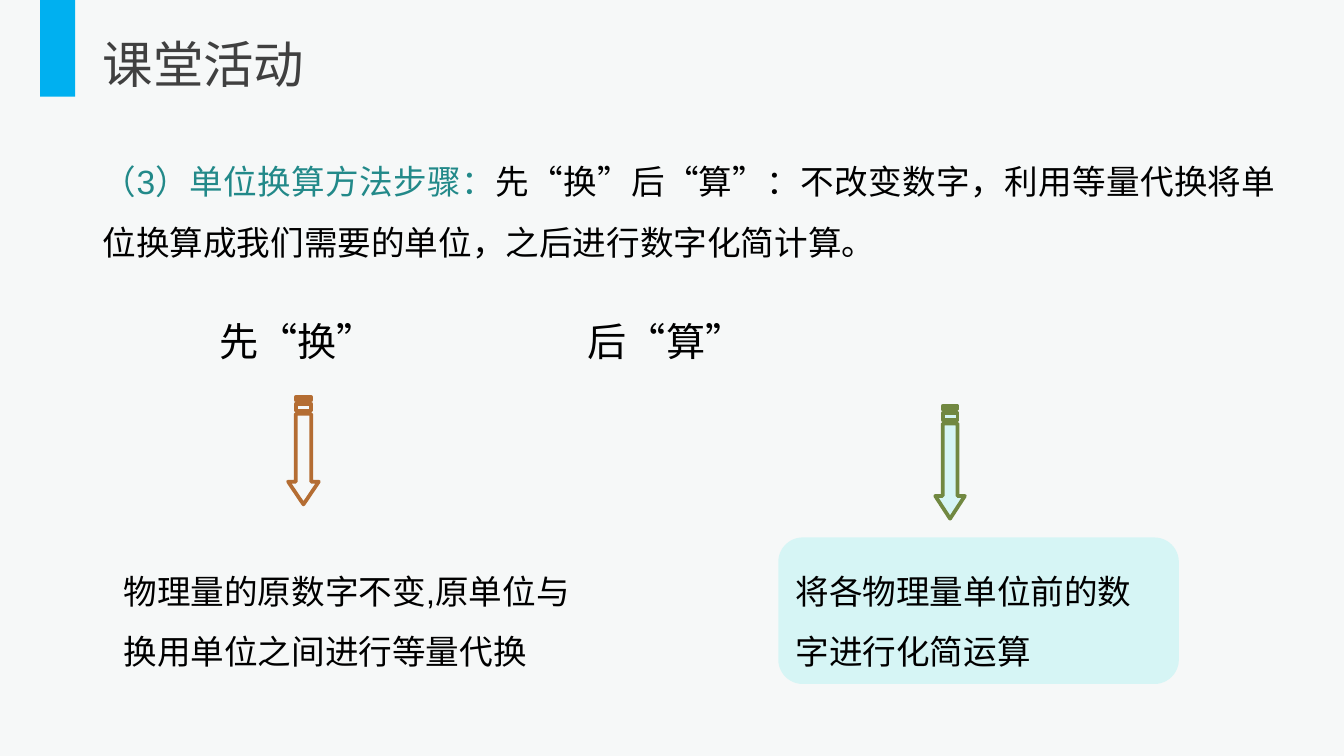
from dataclasses import dataclass

from lxml import etree
from pptx import Presentation
from pptx import util as u
from pptx.dml.color import RGBColor
from pptx.enum import shapes, text
from pptx.oxml import ns

Cm = u.Cm


@dataclass(frozen=True)
class Theme:
    font: str = "Arial"
    page: str = "F6F8F8"
    bar: str = "00B0F0"
    title: str = "404040"
    key: str = "228989"
    ink: str = "000000"
    mint: str = "D6F5F5"
    rust: str = "B46D33"
    moss: str = "718841"
    big: int = 27
    mid: int = 21
    body: int = 18


T = Theme()


def paint(item, color):
    item.fill.solid()
    item.fill.fore_color.rgb = RGBColor.from_string(color)


def write(shape, runs, align=text.PP_ALIGN.LEFT, space=None, wrap=True,
          anchor=text.MSO_ANCHOR.TOP):
    """Fill a shape with one paragraph of (words, size, color) runs."""
    frame = shape.text_frame
    frame.margin_left = frame.margin_right = Cm(0.19)
    frame.margin_top = frame.margin_bottom = Cm(0.1)
    frame.word_wrap = wrap
    frame.auto_size = text.MSO_AUTO_SIZE.SHAPE_TO_FIT_TEXT
    frame.vertical_anchor = anchor
    para = frame.paragraphs[0]
    para.alignment = align
    if space:
        para.line_spacing = space
    for words, size, color in runs:
        run = para.add_run()
        run.text = words
        run.font.name = T.font
        run.font.size = u.Pt(size)
        run.font.color.rgb = RGBColor.from_string(color)
    return para


def add_title(slide, words):
    title = slide.shapes.title
    title.left, title.top, title.width, title.height = map(
        Cm, (1.75, 0.53, 4.27, 1.35))
    write(title, [(words, T.big, T.title)], text.PP_ALIGN.JUSTIFY, wrap=False)


def add_box(slide, kind, place, color):
    box = slide.shapes.add_shape(kind, *map(Cm, place))
    box.shadow.inherit = False
    paint(box, color)
    box.line.fill.background()
    return box


def add_note(slide, kind, place, color, words):
    box = add_box(slide, kind, place, color)
    write(box, [(words, T.body, T.ink)], space=1.5,
          anchor=text.MSO_ANCHOR.MIDDLE)


def add_text(slide, place):
    return slide.shapes.add_textbox(*map(Cm, place))


def add_tab(para, pos):
    tabs = etree.SubElement(para._p.get_or_add_pPr(), ns.qn("a:tabLst"))
    etree.SubElement(tabs, ns.qn("a:tab"), pos=str(int(Cm(pos))), algn="l")


def add_arrow(slide, place, fill, line):
    """Striped arrow, drawn pointing right and turned to point down."""
    x, y, w, h = place
    neck = w - 0.43
    top, low = h / 4, h * 3 / 4
    shaft = w * 5 / 32
    outlines = [
        [(shaft, top), (neck, top), (neck, 0), (w, h / 2),
         (neck, h), (neck, low), (shaft, low)],
    ]
    for start, end in ((w / 16, w / 8), (0, w / 32)):
        outlines.append([(start, top), (end, top), (end, low), (start, low)])

    pen = None
    for outline in outlines:
        first, *rest = [(Cm(x + dx), Cm(y + dy)) for dx, dy in outline]
        if pen is None:
            pen = slide.shapes.build_freeform(*first)
        else:
            pen.move_to(*first)
        pen.add_line_segments(rest, close=True)
    arrow = pen.convert_to_shape()
    arrow.rotation = 90
    arrow.shadow.inherit = False
    paint(arrow, fill)
    arrow.line.color.rgb = RGBColor.from_string(line)
    arrow.line.width = u.Pt(2)


def main():
    deck = Presentation()
    deck.slide_width, deck.slide_height = Cm(25.4), Cm(14.29)
    slide = deck.slides.add_slide(deck.slide_layouts[5])
    paint(slide.background, T.page)
    kinds = shapes.MSO_SHAPE

    # Heading
    add_box(slide, kinds.RECTANGLE, (0.76, 0, 0.66, 1.83), T.bar)
    add_title(slide, "课堂活动")

    # Method
    method = add_text(slide, (1.75, 2.57, 22.56, 2.49))
    write(method, [
        ("（3）单位换算方法步骤：", T.body, T.key),
        ("先“换”后“算”：不改变数字，利用等量代换将单位换算成我们需要的单位，"
         "之后进行数字化简计算。", T.body, T.ink),
    ], text.PP_ALIGN.JUSTIFY, 1.5)

    # Step names, set apart by a tab stop
    steps = add_text(slide, (3.68, 5.69, 17.88, 1.35))
    para = write(steps, [("先“换”", T.mid, T.ink), ("\t", T.big, T.ink),
                         ("后“算”", T.mid, T.ink)])
    steps.text_frame.margin_left = Cm(0.46)
    add_tab(para, 6.97)

    # Arrows and explanations
    add_arrow(slide, (4.72, 8.23, 2.03, 0.58), T.page, T.rust)
    add_note(slide, kinds.FLOWCHART_ALTERNATE_PROCESS,
             (2.01, 10.16, 9.32, 2.77), T.page,
             "物理量的原数字不变,原单位与换用单位之间进行等量代换")
    add_note(slide, kinds.ROUNDED_RECTANGLE,
             (14.71, 10.16, 7.57, 2.77), T.mint,
             "将各物理量单位前的数字进行化简运算")
    add_arrow(slide, (16.89, 8.46, 2.13, 0.56), T.mint, T.moss)

    deck.save("out.pptx")


if __name__ == "__main__":
    main()
